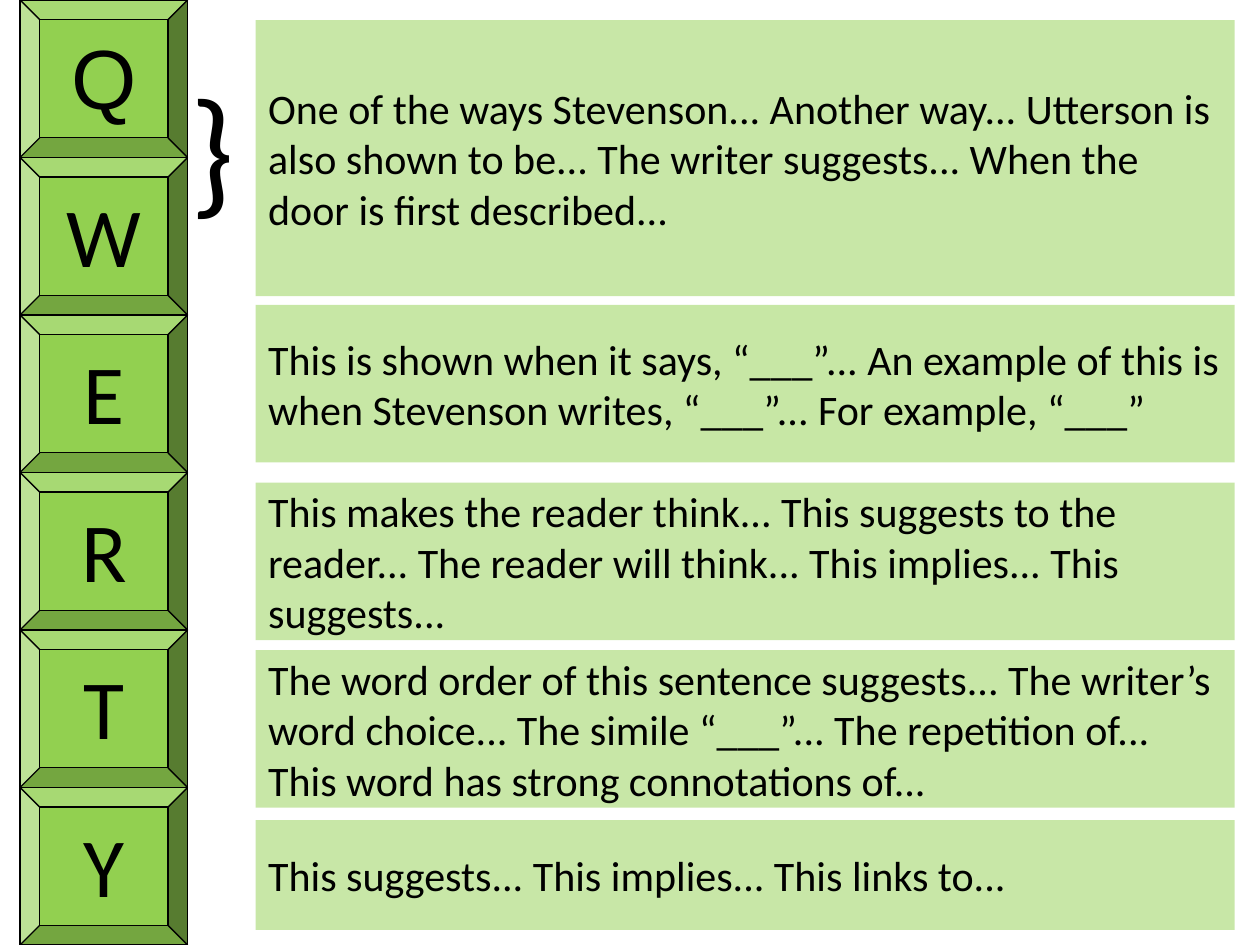
import pptx
import pptx.util
import pptx.dml.color
import pptx.enum.shapes
import pptx.enum.text
from lxml import etree

Inches = pptx.util.Inches
Pt = pptx.util.Pt
Shape = pptx.enum.shapes.MSO_SHAPE
Anchor = pptx.enum.text.MSO_ANCHOR
Align = pptx.enum.text.PP_ALIGN

GREEN = pptx.dml.color.RGBColor(0x92, 0xD0, 0x50)
BLACK = pptx.dml.color.RGBColor(0, 0, 0)

KEYS = [("Q", "Arial"), ("W", "Calibri"), ("E", "Calibri"),
        ("R", "Calibri"), ("T", "Calibri"), ("Y", "Calibri")]
KEY_LEFT, KEY_WIDTH, KEY_HEIGHT = 0.16, 1.33, 1.25

# top, height, opacity in percent, sentence starters
STARTERS = [
    (0.16, 2.19, 50, "One of the ways Stevenson... Another way... Utterson is also "
     "shown to be... The writer suggests... When the door is first described..."),
    (2.42, 1.25, 51, "This is shown when it says, “___”... An example of this is "
     "when Stevenson writes, “___”... For example, “___”"),
    (3.83, 1.25, 50, "This makes the reader think... This suggests to the reader... "
     "The reader will think... This implies... This suggests..."),
    (5.16, 1.25, 50, "The word order of this sentence suggests... The writer’s word "
     "choice... The simile “___”... The repetition of... This word has strong "
     "connotations of..."),
    (6.51, 0.87, 50, "This suggests... This implies... This links to..."),
]
STARTER_LEFT, STARTER_WIDTH = 2.03, 7.77


def write(shape, text, size, font, align=Align.LEFT, anchor=Anchor.TOP):
    frame = shape.text_frame
    frame.word_wrap = True
    frame.vertical_anchor = anchor
    paragraph = frame.paragraphs[0]
    paragraph.alignment = align
    run = paragraph.add_run()
    run.text = text
    run.font.size = Pt(size)
    run.font.name = font
    run.font.color.rgb = BLACK


def add_green(slide, preset, left, top, width, height):
    shape = slide.shapes.add_shape(
        preset, Inches(left), Inches(top), Inches(width), Inches(height))
    shape.shadow.inherit = False
    shape.fill.solid()
    shape.fill.fore_color.rgb = GREEN
    return shape


def set_opacity(shape, percent):
    color = shape.fill._xPr.find(".//" + pptx.oxml.ns.qn("a:srgbClr"))
    alpha = etree.SubElement(color, pptx.oxml.ns.qn("a:alpha"))
    alpha.set("val", str(percent * 1000))


def main():
    deck = pptx.Presentation()
    deck.slide_width, deck.slide_height = Inches(10), Inches(7.5)
    slide = deck.slides.add_slide(deck.slide_layouts[6])

    for row, (letter, font) in enumerate(KEYS):
        key = add_green(slide, Shape.BEVEL, KEY_LEFT, row * KEY_HEIGHT,
                        KEY_WIDTH, KEY_HEIGHT)
        key.line.color.rgb = BLACK
        key.line.width = Pt(0.75)
        write(key, letter, 48, font, align=Align.CENTER)

    brace = slide.shapes.add_textbox(
        Inches(1.41), Inches(0.43), Inches(0.55), Inches(1.45))
    write(brace, "}", 80, "Calibri")

    for top, height, opacity, text in STARTERS:
        panel = add_green(slide, Shape.RECTANGLE, STARTER_LEFT, top,
                          STARTER_WIDTH, height)
        panel.line.fill.background()
        set_opacity(panel, opacity)
        write(panel, text, 24, "Calibri", anchor=Anchor.MIDDLE)

    deck.save("out.pptx")


if __name__ == "__main__":
    main()
